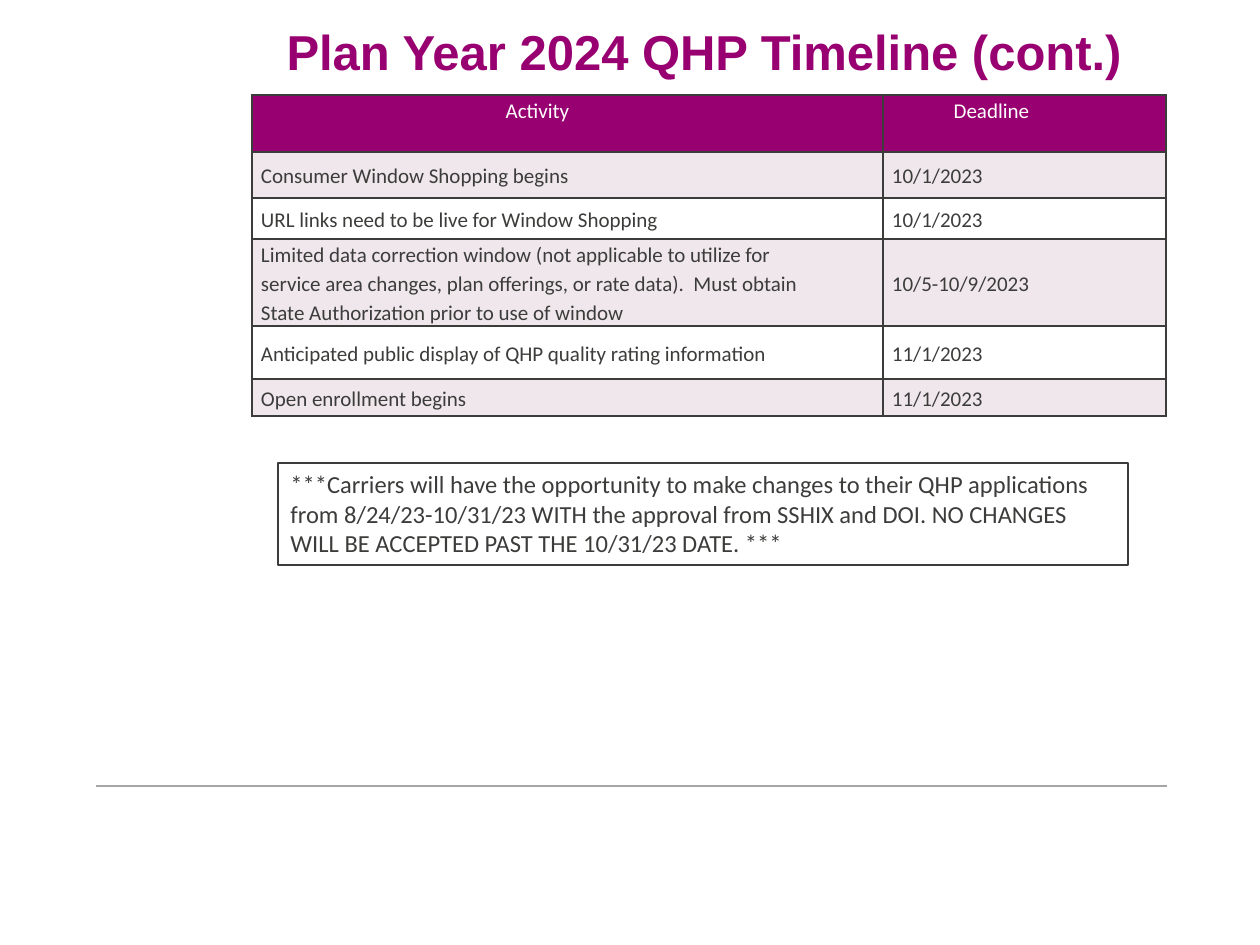
"""Build the Plan Year 2024 QHP timeline slide."""
import lxml.etree
import pptx
import pptx.dml.color
import pptx.enum.shapes
import pptx.enum.text
import pptx.oxml.ns
import pptx.util

RGBColor = pptx.dml.color.RGBColor
Align = pptx.enum.text.PP_ALIGN
Anchor = pptx.enum.text.MSO_ANCHOR
PURPLE = RGBColor(0x98, 0x00, 0x71)
DARK = RGBColor(0x3C, 0x3C, 0x3B)
BAND = RGBColor(0xEF, 0xE7, 0xEB)
WHITE = RGBColor(0xFF, 0xFF, 0xFF)
GRAY = RGBColor(0xA5, 0xA6, 0xA5)

TITLE = "Plan Year 2024 QHP Timeline (cont.)"
ROWS = [
    ("Activity", "Deadline", 57),
    ("Consumer Window Shopping begins", "10/1/2023", 46),
    ("URL links need to be live for Window Shopping", "10/1/2023", 41),
    ("Limited data correction window (not applicable to utilize for service area changes, "
     "plan offerings, or rate data).  Must obtain State Authorization prior to use of window",
     "10/5-10/9/2023", 87),
    ("Anticipated public display of QHP quality rating information", "11/1/2023", 53),
    ("Open enrollment begins", "11/1/2023", 37),
]
COLUMNS = [{"width": 631, "right": 69}, {"width": 283, "right": 75}]
NOTE = ("***Carriers will have the opportunity to make changes to their QHP applications from "
        "8/24/23-10/31/23 WITH the approval from SSHIX and DOI. NO CHANGES WILL BE ACCEPTED "
        "PAST THE 10/31/23 DATE. ***")


def px(length):
    return pptx.util.Emu(round(length * 914400 / 126))


def write(frame, text, size, color, font="Calibri", bold=False, align=Align.LEFT, spacing=None):
    frame.word_wrap = True
    paragraph = frame.paragraphs[0]
    paragraph.alignment = align
    paragraph.line_spacing = spacing
    run = paragraph.add_run()
    run.text = text
    run.font.name = font
    run.font.size = pptx.util.Pt(size)
    run.font.bold = bold
    run.font.color.rgb = color


def add_borders(cell):
    properties = cell._tc.get_or_add_tcPr()
    qn = pptx.oxml.ns.qn
    for index, side in enumerate(("a:lnL", "a:lnR", "a:lnT", "a:lnB")):
        line = lxml.etree.Element(qn(side), w=str(pptx.util.Pt(1)))
        fill = lxml.etree.SubElement(line, qn("a:solidFill"))
        lxml.etree.SubElement(fill, qn("a:srgbClr"), val=str(DARK))
        properties.insert(index, line)


def add_timeline(slide):
    width = sum(column["width"] for column in COLUMNS)
    height = sum(row[-1] for row in ROWS)
    shape = slide.shapes.add_table(len(ROWS), len(COLUMNS), px(252), px(95), px(width), px(height))
    table = shape.table
    for column, settings in zip(table.columns, COLUMNS):
        column.width = px(settings["width"])
    for row_index, (*texts, row_height) in enumerate(ROWS):
        table.rows[row_index].height = px(row_height)
        header = row_index == 0
        fill = PURPLE if header else BAND if row_index % 2 else WHITE
        for column_index, text in enumerate(texts):
            cell = table.cell(row_index, column_index)
            cell.margin_left = px(9)
            cell.margin_right = px(COLUMNS[column_index]["right"])
            cell.margin_top = cell.margin_bottom = 0
            cell.vertical_anchor = Anchor.TOP if header else Anchor.MIDDLE
            cell.fill.solid()
            cell.fill.fore_color.rgb = fill
            add_borders(cell)
            write(cell.text_frame, text, 12, WHITE if header else DARK, spacing=1.13,
                  align=Align.CENTER if header else Align.LEFT)


def main():
    presentation = pptx.Presentation()
    presentation.slide_width, presentation.slide_height = px(1260), px(945)
    slide = presentation.slides.add_slide(presentation.slide_layouts[6])

    rule = slide.shapes.add_connector(
        pptx.enum.shapes.MSO_CONNECTOR.STRAIGHT, px(96), px(786), px(1167), px(786))
    rule.line.color.rgb = GRAY
    rule.line.width = pptx.util.Pt(1)
    lxml.etree.SubElement(rule._element.spPr, pptx.oxml.ns.qn("a:effectLst"))

    title = slide.shapes.add_textbox(px(242), px(10), px(924), px(100))
    title.text_frame.margin_top = px(12)
    write(title.text_frame, TITLE, 28, PURPLE, font="Arial", bold=True, align=Align.CENTER)

    add_timeline(slide)

    note = slide.shapes.add_shape(
        pptx.enum.shapes.MSO_SHAPE.RECTANGLE, px(278), px(463), px(850), px(102))
    note.shadow.inherit = False
    note.fill.background()
    note.line.color.rgb = DARK
    note.line.width = pptx.util.Pt(0.75)
    note.text_frame.vertical_anchor = Anchor.TOP
    write(note.text_frame, NOTE, 14, DARK)

    presentation.save("out.pptx")


if __name__ == "__main__":
    main()
